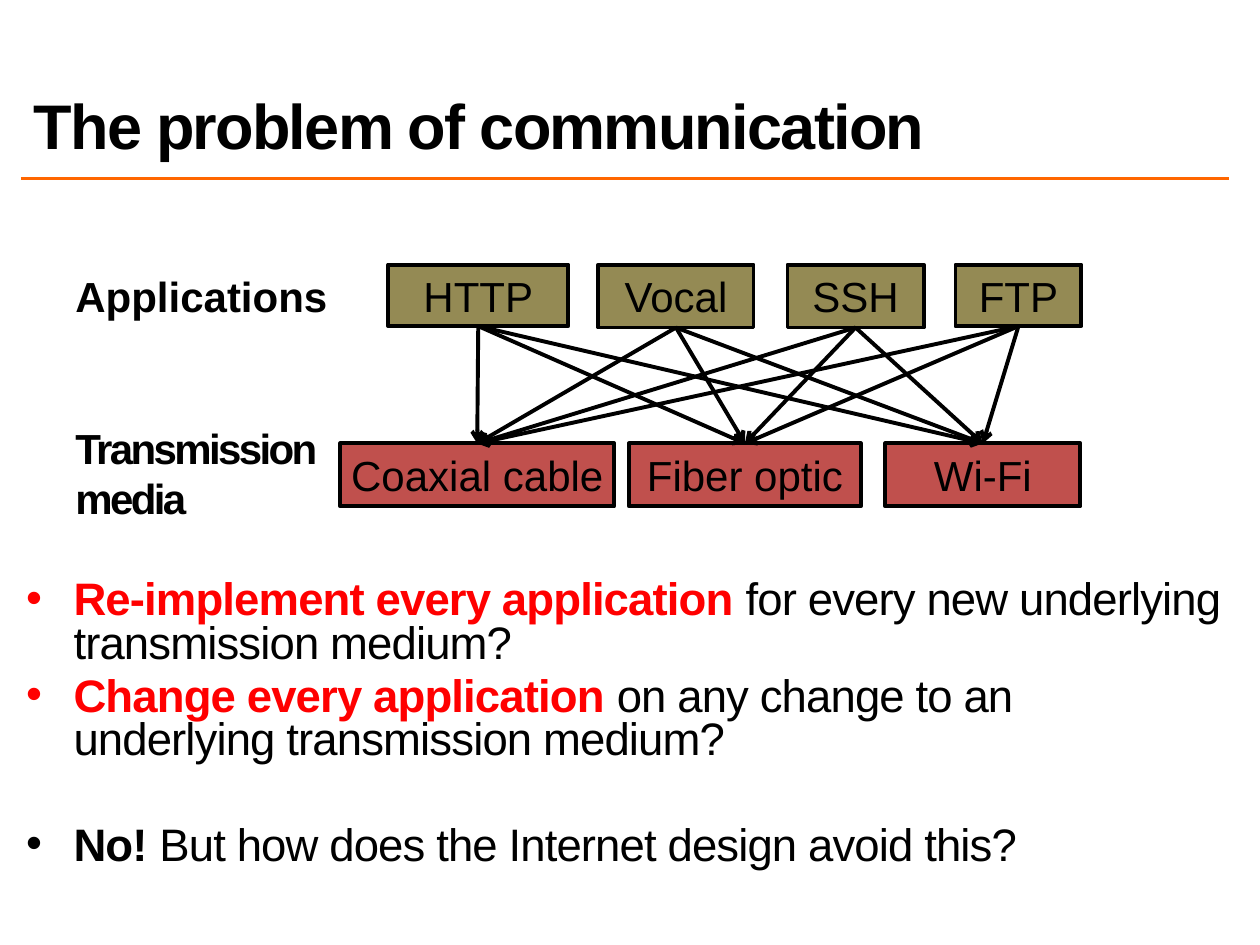
"""Build the slide on applications and transmission media."""
import itertools
from dataclasses import dataclass

import pptx
import pptx.dml.color
import pptx.enum.shapes
import pptx.enum.text
import pptx.util
from lxml import etree
from pptx.oxml.ns import qn

Pt = pptx.util.Pt
ANCHOR = pptx.enum.text.MSO_ANCHOR
ALIGN = pptx.enum.text.PP_ALIGN
BLACK, RED, ORANGE = "000000", "FF0000", "FF6600"
OLIVE, BRICK = "948A54", "C0504D"
STRAIGHT = pptx.enum.shapes.MSO_CONNECTOR.STRAIGHT


@dataclass
class Box:
    text: str
    left: float
    width: float
    height: float = 36


@dataclass
class Label:
    lines: list[str]
    top: float
    width: float
    height: float
    spacing: float = 0


@dataclass
class Bullet:
    lead: str
    rest: str
    color: str
    before: float = 5.2


APPLICATIONS = [
    Box("HTTP", 221.8, 103, 35.2),
    Box("Vocal", 342, 88.6),
    Box("SSH", 450, 77.8),
    Box("FTP", 546, 72, 35.2),
]
MEDIA = [
    Box("Coaxial cable", 194.4, 156.6),
    Box("Fiber optic", 359.4, 132.6),
    Box("Wi-Fi", 505.8, 111.6),
]
LABELS = [
    Label(["Applications"], 151.2, 159.8, 36),
    Label(["Transmission", "media"], 237.6, 157.7, 65.5, -1.5),
]
BULLETS = [
    Bullet("Re-implement every application ",
           "for every new underlying transmission medium?", RED),
    Bullet("Change every application ",
           "on any change to an underlying transmission medium?", RED),
    Bullet("No!", " But how does the Internet design avoid this?", BLACK, 35.4),
]


def rgb(value: str) -> pptx.dml.color.RGBColor:
    """Return the colour for a hex string."""
    return pptx.dml.color.RGBColor.from_string(value)


def style(r, size: float, color: str = BLACK, bold: bool = False,
          spacing: float = 0) -> None:
    """Format one run of text."""
    r.font.name = "Arial"
    r.font.size = Pt(size)
    r.font.bold = bold
    r.font.color.rgb = rgb(color)
    if spacing:
        r.font._element.set("spc", str(round(spacing * 100)))


def place(sp, left: float, top: float, width: float, height: float) -> None:
    """Move and size a shape."""
    sp.left, sp.top, sp.width, sp.height = map(Pt, (left, top, width, height))


def add_title(s) -> None:
    """Fill the title placeholder."""
    sp = s.shapes.title
    place(sp, 12, 12, 690, 84)
    tf = sp.text_frame
    tf.text = "The problem of communication"
    tf.auto_size = pptx.enum.text.MSO_AUTO_SIZE.NONE
    tf.vertical_anchor = ANCHOR.BOTTOM
    p = tf.paragraphs[0]
    p.alignment = ALIGN.LEFT
    p.line_spacing = 0.8
    style(p.runs[0], 36, bold=True, spacing=-1)


def add_bullets(s, bullets: list[Bullet]) -> None:
    """Fill the body placeholder with the bulleted list."""
    sp = s.placeholders[1]
    place(sp, 12, 329, 690, 176.4)
    tf = sp.text_frame
    tf.auto_size = pptx.enum.text.MSO_AUTO_SIZE.NONE
    tf.margin_left = tf.margin_right = Pt(3)
    tf.margin_top = tf.margin_bottom = Pt(3)
    tf.text = "\n".join(b.lead for b in bullets)
    for p, b in zip(tf.paragraphs, bullets):
        p.line_spacing = 0.8
        p.space_before = Pt(b.before)
        pPr = p._p.get_or_add_pPr()
        pPr.set("marL", str(Pt(27)))
        pPr.set("indent", str(-Pt(27)))
        etree.SubElement(pPr, qn("a:buChar")).set("char", "•")
        style(p.runs[0], 26, b.color, True, -0.5)
        r = p.add_run()
        r.text = b.rest
        style(r, 26, spacing=-0.5)


def add_label(s, label: Label) -> None:
    """Add a bold row label."""
    sp = s.shapes.add_textbox(Pt(36), Pt(label.top), Pt(label.width), Pt(label.height))
    tf = sp.text_frame
    tf.word_wrap = False
    tf.text = "\n".join(label.lines)
    for p in tf.paragraphs:
        style(p.runs[0], 24, bold=True, spacing=label.spacing)


def add_box(s, box: Box, top: float, fill: str):
    """Add a filled, outlined box with centred text."""
    sp = s.shapes.add_shape(pptx.enum.shapes.MSO_SHAPE.RECTANGLE, Pt(box.left),
                            Pt(top), Pt(box.width), Pt(box.height))
    sp.shadow.inherit = False
    sp.fill.solid()
    sp.fill.fore_color.rgb = rgb(fill)
    sp.line.color.rgb = rgb(BLACK)
    sp.line.width = Pt(2.25)
    tf = sp.text_frame
    tf.word_wrap = False
    tf.vertical_anchor = ANCHOR.MIDDLE
    tf.text = box.text
    tf.paragraphs[0].alignment = ALIGN.CENTER
    style(tf.paragraphs[0].runs[0], 24)
    return sp


def add_line(s, x1: float, y1: float, x2: float, y2: float, color: str, width: float):
    """Add a straight connector without a shadow."""
    sp = s.shapes.add_connector(STRAIGHT, Pt(x1), Pt(y1), Pt(x2), Pt(y2))
    sp.line.color.rgb = rgb(color)
    sp.line.width = Pt(width)
    etree.SubElement(sp._element.spPr, qn("a:effectLst"))
    return sp


def add_arrow(s, source, target) -> None:
    """Link the bottom of one box to the top of another."""
    sp = add_line(s, 0, 0, 0, 0, BLACK, 2.25)
    sp.begin_connect(source, 2)
    sp.end_connect(target, 0)
    etree.SubElement(sp.line._get_or_add_ln(), qn("a:tailEnd")).set("type", "arrow")


def main() -> None:
    """Build and save the presentation."""
    prs = pptx.Presentation()
    prs.slide_width, prs.slide_height = Pt(720), Pt(540)
    s = prs.slides.add_slide(prs.slide_layouts[1])
    add_line(s, 12, 102, 702, 102, ORANGE, 2)
    add_title(s)
    add_bullets(s, BULLETS)
    for label in LABELS:
        add_label(s, label)
    applications = [add_box(s, box, 151.2, OLIVE) for box in APPLICATIONS]
    media = [add_box(s, box, 253.4, BRICK) for box in MEDIA]
    for source, target in itertools.product(applications, media):
        add_arrow(s, source, target)
    prs.save("out.pptx")


if __name__ == "__main__":
    main()
